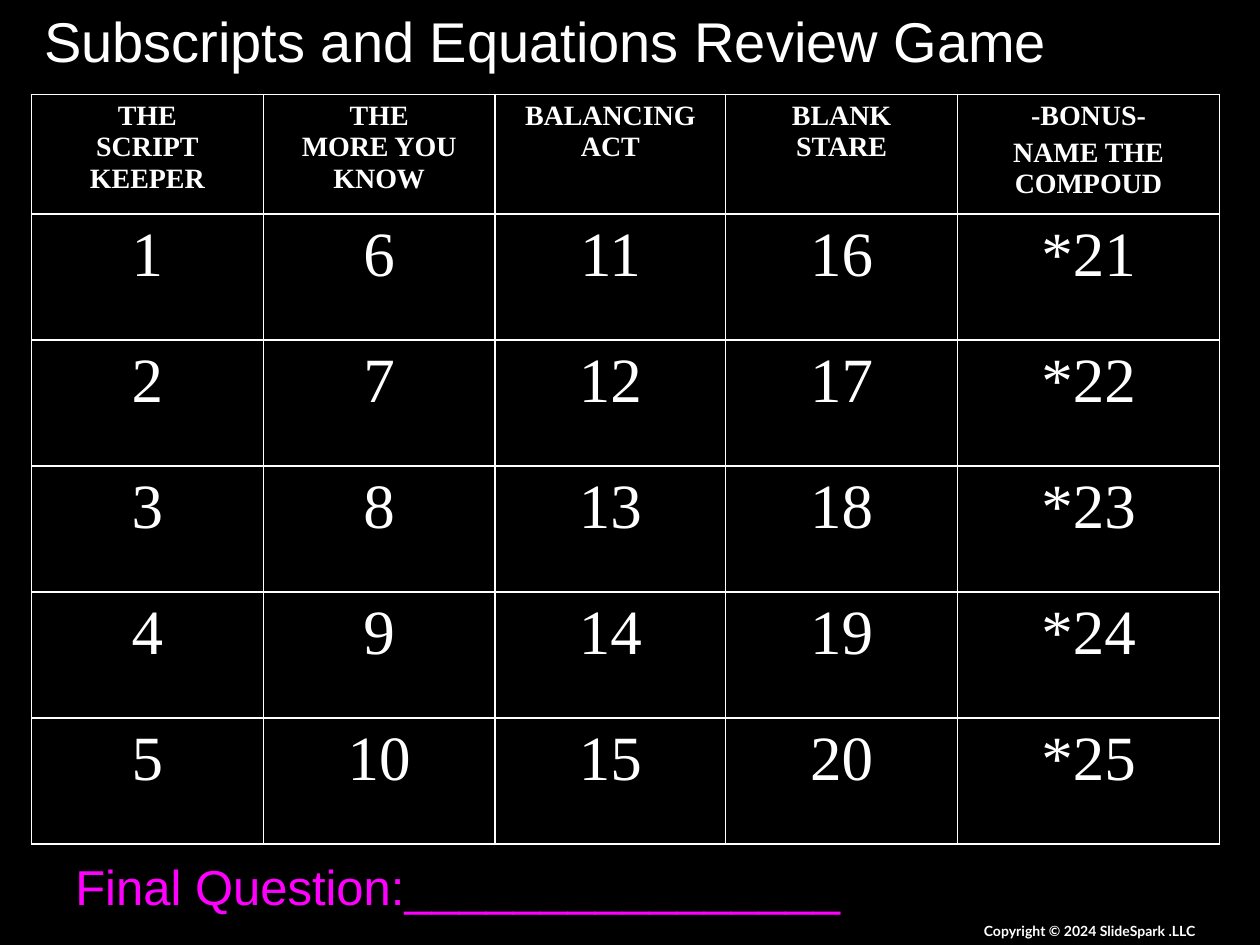
from dataclasses import dataclass

from lxml.etree import SubElement
from pptx import Presentation
from pptx.dml.color import RGBColor
from pptx.enum.text import MSO_ANCHOR, MSO_AUTO_SIZE, PP_ALIGN
from pptx.oxml.ns import qn
from pptx.util import Inches, Pt

BLACK = RGBColor(0x00, 0x00, 0x00)
WHITE = RGBColor(0xFF, 0xFF, 0xFF)
MAGENTA = RGBColor(0xFF, 0x00, 0xFF)

QUESTIONS = 5
HEADER_HEIGHT, QUESTION_HEIGHT = 0.95, 1


@dataclass
class Category:
    heading: list[str]
    width: float
    prefix: str = ""


@dataclass
class Caption:
    text: str
    box: tuple[float, float, float, float]
    font: str
    size: float
    color: RGBColor = WHITE
    bold: bool = False
    align: PP_ALIGN = PP_ALIGN.LEFT


CATEGORIES = [
    Category(["THE\nSCRIPT\nKEEPER"], 1.84),
    Category(["THE\nMORE YOU\nKNOW"], 1.84),
    Category(["BALANCING\nACT"], 1.83),
    Category(["BLANK\nSTARE"], 1.84),
    Category(["-BONUS-", "NAME THE COMPOUD"], 2.08, "*"),
]
TITLE = Caption("Subscripts and Equations Review Game", (0.25, 0, 9.75, 0.63), "Arial", 32)
CAPTIONS = [
    Caption("Copyright © 2024 SlideSpark .LLC", (6.17, 7.27, 3.42, 0.23), "Lato", 8,
            bold=True, align=PP_ALIGN.RIGHT),
    Caption("Final Question:" + "_" * 16, (0.5, 6.75, 6.58, 0.57), "Arial", 28, MAGENTA),
]


def style_paragraph(paragraph, font: str, size: float, color: RGBColor,
                    bold: bool, align: PP_ALIGN) -> None:
    paragraph.alignment = align
    paragraph.font.name = font
    paragraph.font.size = Pt(size)
    paragraph.font.color.rgb = color
    paragraph.font.bold = bold


def write_caption(shape, caption: Caption) -> None:
    shape.left, shape.top, shape.width, shape.height = map(Inches, caption.box)
    frame = shape.text_frame
    frame.word_wrap = True
    frame.auto_size = MSO_AUTO_SIZE.NONE
    frame.vertical_anchor = MSO_ANCHOR.TOP
    frame.text = caption.text
    style_paragraph(frame.paragraphs[0], caption.font, caption.size,
                    caption.color, caption.bold, caption.align)


def outline_cell(cell) -> None:
    properties = cell._tc.get_or_add_tcPr()
    for side in ("a:lnL", "a:lnR", "a:lnT", "a:lnB"):
        line = SubElement(properties, qn(side), w=str(Pt(1)))
        fill = SubElement(line, qn("a:solidFill"))
        SubElement(fill, qn("a:srgbClr"), val=str(WHITE))


def write_cell(cell, lines: list[str], size: float, bold: bool = False) -> None:
    outline_cell(cell)
    cell.fill.solid()
    cell.fill.fore_color.rgb = BLACK
    frame = cell.text_frame
    for i, line in enumerate(lines):
        paragraph = frame.add_paragraph() if i else frame.paragraphs[0]
        paragraph.text = line.replace("\n", "\v")
        if i:
            paragraph.space_before = Pt(0.2 * size)
        style_paragraph(paragraph, "Times New Roman", size, WHITE, bold, PP_ALIGN.CENTER)


def add_board(slide) -> None:
    width = sum(category.width for category in CATEGORIES)
    height = HEADER_HEIGHT + QUESTIONS * QUESTION_HEIGHT
    board = slide.shapes.add_table(
        QUESTIONS + 1, len(CATEGORIES),
        Inches(0.25), Inches(0.75), Inches(width), Inches(height)).table
    board.first_row = board.horz_banding = False
    for i, row in enumerate(board.rows):
        row.height = Inches(QUESTION_HEIGHT if i else HEADER_HEIGHT)
    for column, category in enumerate(CATEGORIES):
        board.columns[column].width = Inches(category.width)
        write_cell(board.cell(0, column), category.heading, 16, bold=True)
        for row in range(1, QUESTIONS + 1):
            number = column * QUESTIONS + row
            write_cell(board.cell(row, column), [f"{category.prefix}{number}"], 36)


def main() -> None:
    deck = Presentation()
    deck.slide_width, deck.slide_height = Inches(10), Inches(7.5)
    slide = deck.slides.add_slide(deck.slide_layouts.get_by_name("Title Only"))
    slide.background.fill.solid()
    slide.background.fill.fore_color.rgb = BLACK
    add_board(slide)
    write_caption(slide.shapes.title, TITLE)
    for caption in CAPTIONS:
        write_caption(slide.shapes.add_textbox(*map(Inches, caption.box)), caption)
    deck.save("out.pptx")


if __name__ == "__main__":
    main()
